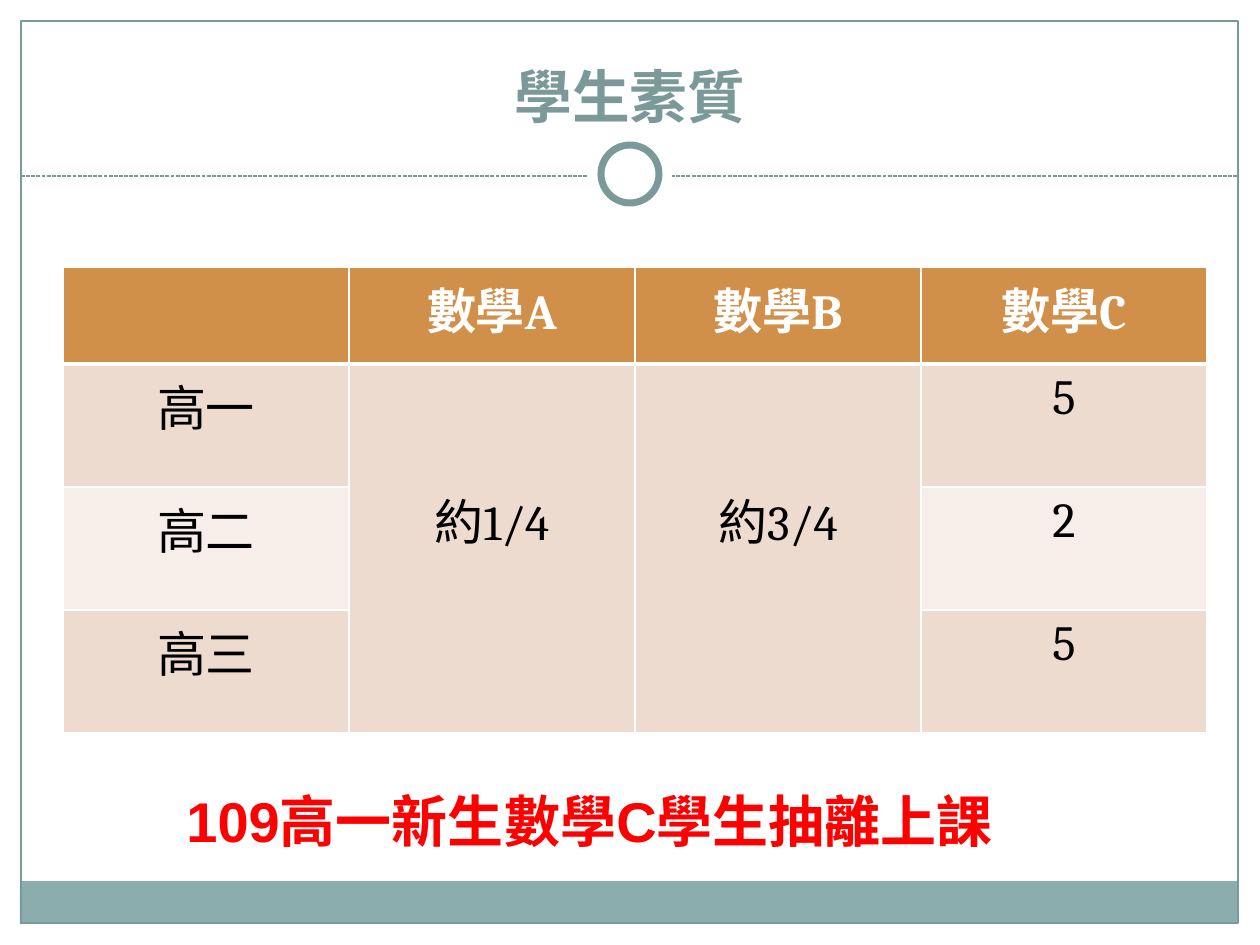
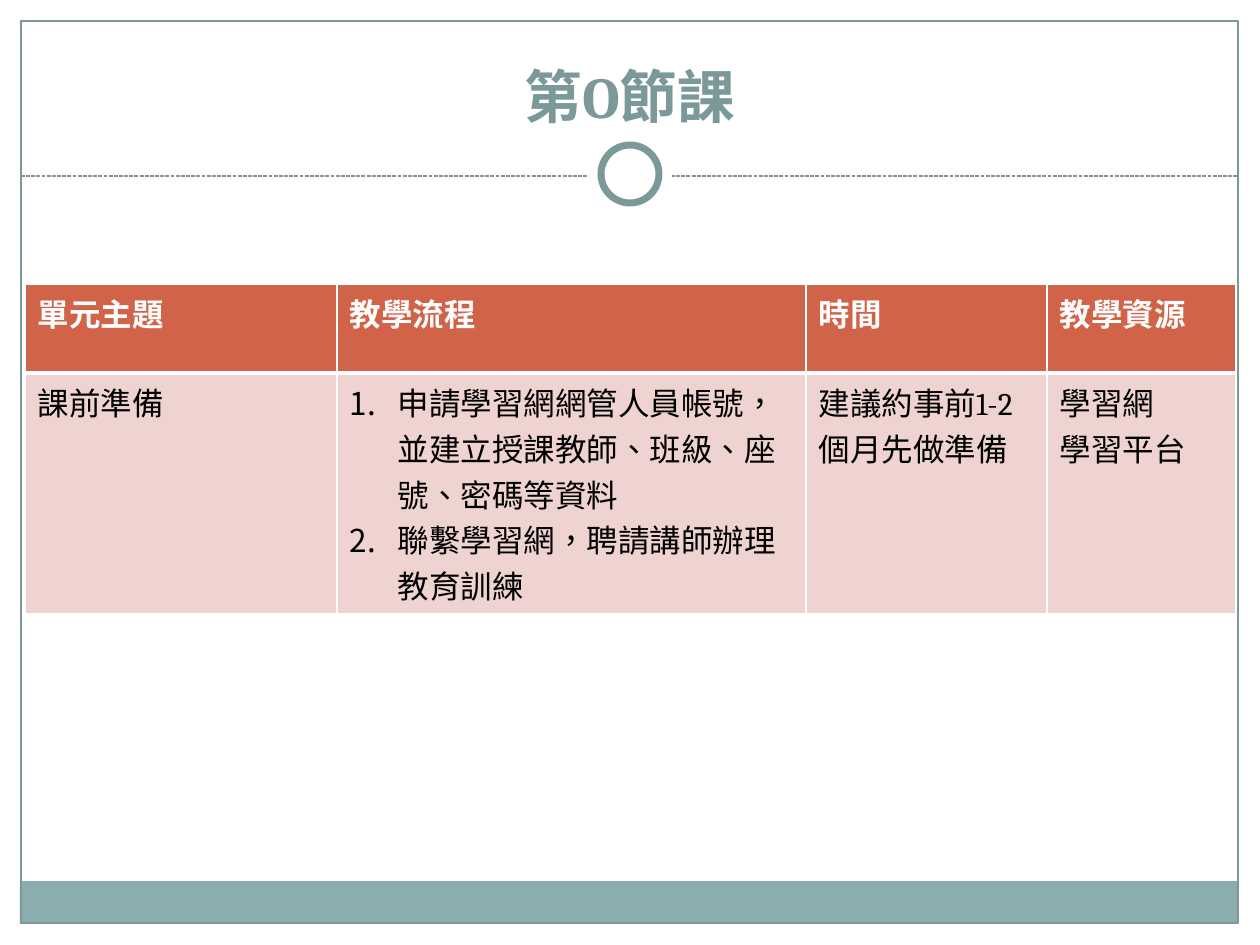
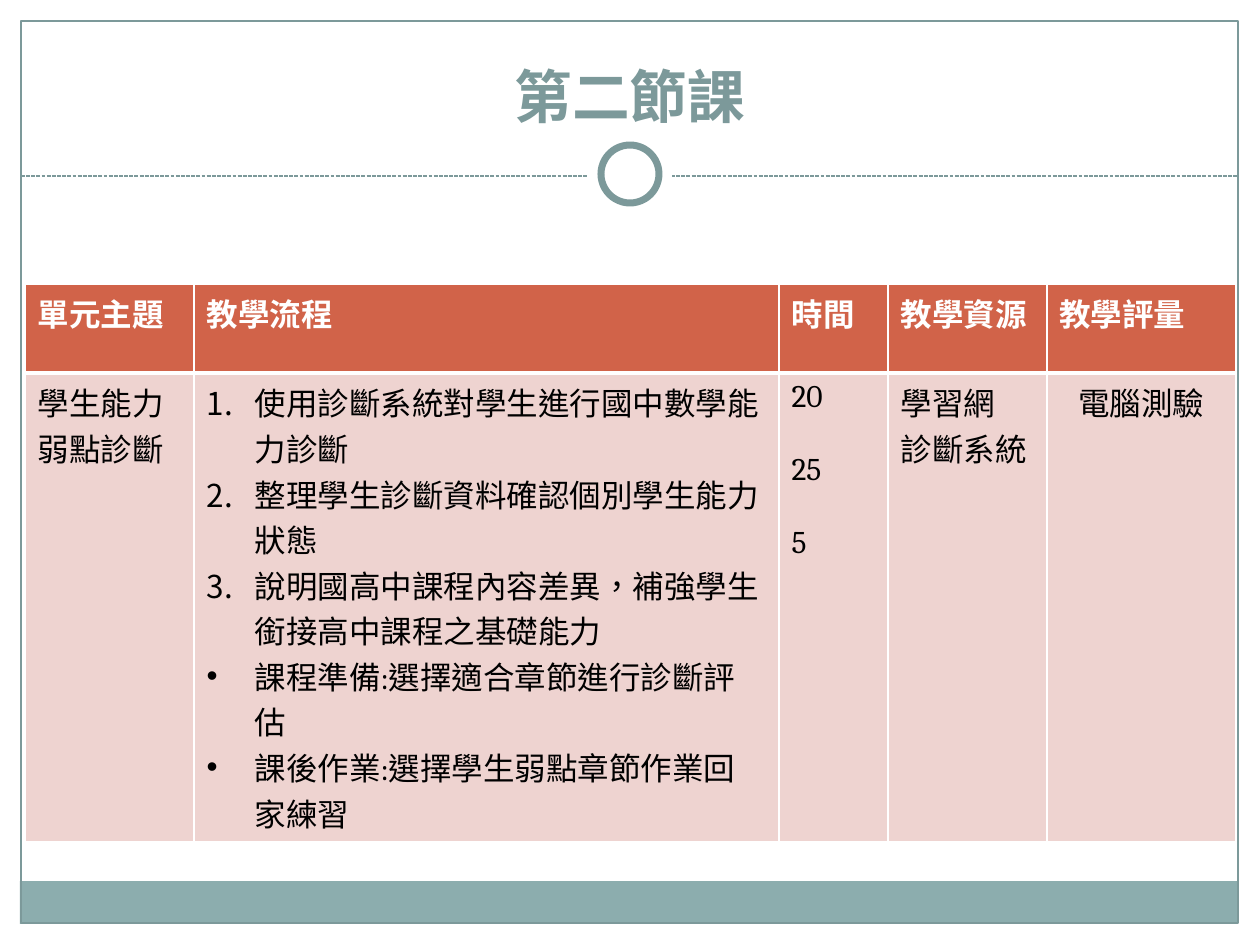
from dataclasses import dataclass
from typing import NamedTuple

from lxml.etree import SubElement
from pptx import Presentation
from pptx.dml.color import RGBColor
from pptx.enum.dml import MSO_LINE
from pptx.enum.lang import MSO_LANGUAGE_ID as Language
from pptx.enum.shapes import MSO_CONNECTOR, MSO_SHAPE as Shape
from pptx.enum.text import MSO_ANCHOR as Anchor, MSO_AUTO_SIZE as AutoSize, PP_ALIGN as Align
from pptx.oxml.ns import qn
from pptx.util import Emu, Pt

PX_PER_INCH = 126

WHITE = RGBColor(0xFF, 0xFF, 0xFF)
BLACK = RGBColor(0x00, 0x00, 0x00)
RED = RGBColor(0xFF, 0x00, 0x00)
TEAL = RGBColor(0x7C, 0x99, 0x9A)
TEAL_BAND = RGBColor(0x8C, 0xAD, 0xAE)
OCHRE = RGBColor(0xD1, 0x90, 0x49)
OCHRE_TINT = RGBColor(0xEE, 0xDB, 0xD0)
OCHRE_PALE = RGBColor(0xF7, 0xEE, 0xE9)
BRICK = RGBColor(0xD1, 0x63, 0x49)
BRICK_TINT = RGBColor(0xEE, 0xD3, 0xD0)

BODY_FONT = "Cambria"
NOTE_FONT = "Arial"
NUMBER = "arabicPeriod"
BULLET = "•"
LIST_INDENT = 48


class Box(NamedTuple):
    left: int
    top: int
    width: int
    height: int


class Line(NamedTuple):
    text: str
    marker: str = ""


@dataclass(frozen=True)
class Cell:
    lines: tuple[Line, ...]
    align: Align = Align.LEFT
    gap: int = 0  # points between paragraphs


@dataclass(frozen=True)
class Grid:
    left: int
    top: int
    columns: tuple[int, ...]
    rows: tuple[int, ...]
    header_fill: RGBColor
    row_fills: tuple[RGBColor, ...]
    size: int
    cells: tuple[tuple[Cell | None, ...], ...]


def px(length: int) -> Emu:
    return Emu(round(length * 914400 / PX_PER_INCH))


def emu(box: Box) -> tuple[Emu, ...]:
    return tuple(px(length) for length in box)


def plain(*texts: str, align: Align = Align.LEFT, gap: int = 0) -> Cell:
    return Cell(tuple(Line(text) for text in texts), align, gap)


def centred(text: str) -> Cell:
    return plain(text, align=Align.CENTER)


def set_marker(paragraph, marker: str) -> None:
    """Give the paragraph a hanging number or bullet."""
    properties = paragraph._p.get_or_add_pPr()
    properties.set("marL", str(px(LIST_INDENT)))
    properties.set("indent", str(-px(LIST_INDENT)))
    if marker == NUMBER:
        SubElement(properties, qn("a:buAutoNum"), type=NUMBER)
    else:
        SubElement(properties, qn("a:buFont"), typeface=NOTE_FONT)
        SubElement(properties, qn("a:buChar"), char=marker)


def write(frame, lines: tuple[Line, ...], *, size: int, color: RGBColor, bold: bool = False,
          font: str = BODY_FONT, align: Align = Align.LEFT, gap: int = 0) -> None:
    for index, line in enumerate(lines):
        paragraph = frame.add_paragraph() if index else frame.paragraphs[0]
        paragraph.alignment = align
        if index and gap:
            paragraph.space_before = Pt(gap)
        if line.marker:
            set_marker(paragraph, line.marker)
        run = paragraph.add_run()
        run.text = line.text
        run.font.size = Pt(size)
        run.font.name = font
        run.font.bold = bold
        run.font.color.rgb = color
        run.font.language_id = Language.TRADITIONAL_CHINESE


def add_text(slide, box: Box, text: str, *, anchor: Anchor = Anchor.TOP,
             fit: AutoSize = AutoSize.NONE, **text_format) -> None:
    frame = slide.shapes.add_textbox(*emu(box)).text_frame
    frame.word_wrap = True
    frame.auto_size = fit
    frame.vertical_anchor = anchor
    write(frame, (Line(text),), **text_format)


def add_panel(slide, kind: Shape, box: Box, *, fill: RGBColor | None = None,
              line: RGBColor | None = None, weight: float = 0.75) -> None:
    panel = slide.shapes.add_shape(kind, *emu(box))
    panel.shadow.inherit = False
    if fill is None:
        panel.fill.background()
    else:
        panel.fill.solid()
        panel.fill.fore_color.rgb = fill
    if line is None:
        panel.line.fill.background()
    else:
        panel.line.color.rgb = line
        panel.line.width = Pt(weight)


def add_divider(slide, left: int, right: int, y: int) -> None:
    divider = slide.shapes.add_connector(MSO_CONNECTOR.STRAIGHT, px(left), px(y), px(right), px(y))
    divider.line.color.rgb = TEAL
    divider.line.width = Pt(0.75)
    divider.line.dash_style = MSO_LINE.SQUARE_DOT
    SubElement(divider._element.spPr, qn("a:effectLst"))


def set_borders(cell, top: int, bottom: int) -> None:
    """Draw white cell borders; top and bottom are weights in points."""
    properties = cell._tc.get_or_add_tcPr()
    for side, weight in (("L", 1), ("R", 1), ("T", top), ("B", bottom)):
        border = SubElement(properties, qn(f"a:ln{side}"), w=str(Pt(weight)))
        fill = SubElement(border, qn("a:solidFill"))
        SubElement(fill, qn("a:srgbClr"), val=str(WHITE))


def add_grid(slide, grid: Grid):
    box = Box(grid.left, grid.top, sum(grid.columns), sum(grid.rows))
    table = slide.shapes.add_table(len(grid.rows), len(grid.columns), *emu(box)).table
    table.first_row = table.horz_banding = False
    for column, width in zip(table.columns, grid.columns):
        column.width = px(width)
    for row, height in zip(table.rows, grid.rows):
        row.height = px(height)
    fills = (grid.header_fill, *grid.row_fills)
    for r, (contents, fill) in enumerate(zip(grid.cells, fills)):
        is_header = r == 0
        for c, content in enumerate(contents):
            cell = table.cell(r, c)
            set_borders(cell, top=3 if r == 1 else 1, bottom=3 if is_header else 1)
            cell.fill.solid()
            cell.fill.fore_color.rgb = fill
            if content:
                write(cell.text_frame, content.lines, size=grid.size, bold=is_header,
                      color=WHITE if is_header else BLACK,
                      align=content.align, gap=content.gap)
    return table


def add_page(deck, title: str):
    """Add a slide with the frame, footer band, divider ring and title."""
    slide = deck.slides.add_slide(deck.slide_layouts[6])
    add_panel(slide, Shape.RECTANGLE, Box(20, 881, 1217, 43), fill=TEAL_BAND)
    add_panel(slide, Shape.RECTANGLE, Box(21, 21, 1217, 902), line=TEAL)
    add_divider(slide, 21, 1238, 176)
    add_panel(slide, Shape.OVAL, Box(588, 132, 84, 84), fill=WHITE)
    add_panel(slide, Shape.OVAL, Box(601, 145, 58, 58), fill=WHITE, line=TEAL, weight=4)
    add_text(slide, Box(42, 31, 1176, 105), title, anchor=Anchor.BOTTOM,
             size=33, color=TEAL, bold=True, align=Align.CENTER)
    return slide


def lesson_grid(columns: tuple[int, ...], headings: tuple[str, ...], *contents: Cell) -> Grid:
    return Grid(25, 284, columns, (89, 233), BRICK, (BRICK_TINT,), 18,
                (tuple(plain(heading) for heading in headings), contents))


STUDENT_LEVELS = Grid(
    63, 267, (286,) * 4, (97, 123, 123, 123), OCHRE, (OCHRE_TINT, OCHRE_PALE, OCHRE_TINT), 28,
    (
        (None, centred("數學A"), centred("數學B"), centred("數學C")),
        (centred("高一"), centred("約1/4"), centred("約3/4"), centred("5")),
        (centred("高二"), None, None, centred("2")),
        (centred("高三"), None, None, centred("5")),
    ),
)

HEADINGS = ("單元主題", "教學流程", "時間", "教學資源")

PREPARATION = lesson_grid(
    (312, 469, 241, 189), HEADINGS,
    plain("課前準備"),
    Cell((
        Line("申請學習網網管人員帳號，並建立授課教師、班級、座號、密碼等資料", NUMBER),
        Line("聯繫學習網，聘請講師辦理教育訓練", NUMBER),
    )),
    plain("建議約事前1-2個月先做準備"),
    plain("學習網", "學習平台"),
)

DIAGNOSIS = lesson_grid(
    (169, 585, 109, 159, 189), (*HEADINGS, "教學評量"),
    plain("學生能力", "弱點診斷"),
    Cell((
        Line("使用診斷系統對學生進行國中數學能力診斷", NUMBER),
        Line("整理學生診斷資料確認個別學生能力狀態", NUMBER),
        Line("說明國高中課程內容差異，補強學生銜接高中課程之基礎能力", NUMBER),
        Line("課程準備:選擇適合章節進行診斷評估", BULLET),
        Line("課後作業:選擇學生弱點章節作業回家練習", BULLET),
    )),
    plain("20", "25", "5", gap=21),
    plain("學習網", "診斷系統"),
    centred("電腦測驗"),
)


def add_student_levels(deck) -> None:
    slide = add_page(deck, "學生素質")
    table = add_grid(slide, STUDENT_LEVELS)
    for column in (1, 2):
        share = table.cell(1, column)
        share.merge(table.cell(3, column))
        share.vertical_anchor = Anchor.MIDDLE
        share.margin_bottom = px(64)
    add_text(slide, Box(174, 780, 873, 81), "109高一新生數學C學生抽離上課",
             fit=AutoSize.SHAPE_TO_FIT_TEXT, size=32, color=RED, bold=True, font=NOTE_FONT)


def main() -> None:
    deck = Presentation()
    deck.slide_width, deck.slide_height = px(1260), px(945)
    add_student_levels(deck)
    add_grid(add_page(deck, "第O節課"), PREPARATION)
    add_grid(add_page(deck, "第二節課"), DIAGNOSIS)
    deck.save("out.pptx")


if __name__ == "__main__":
    main()
